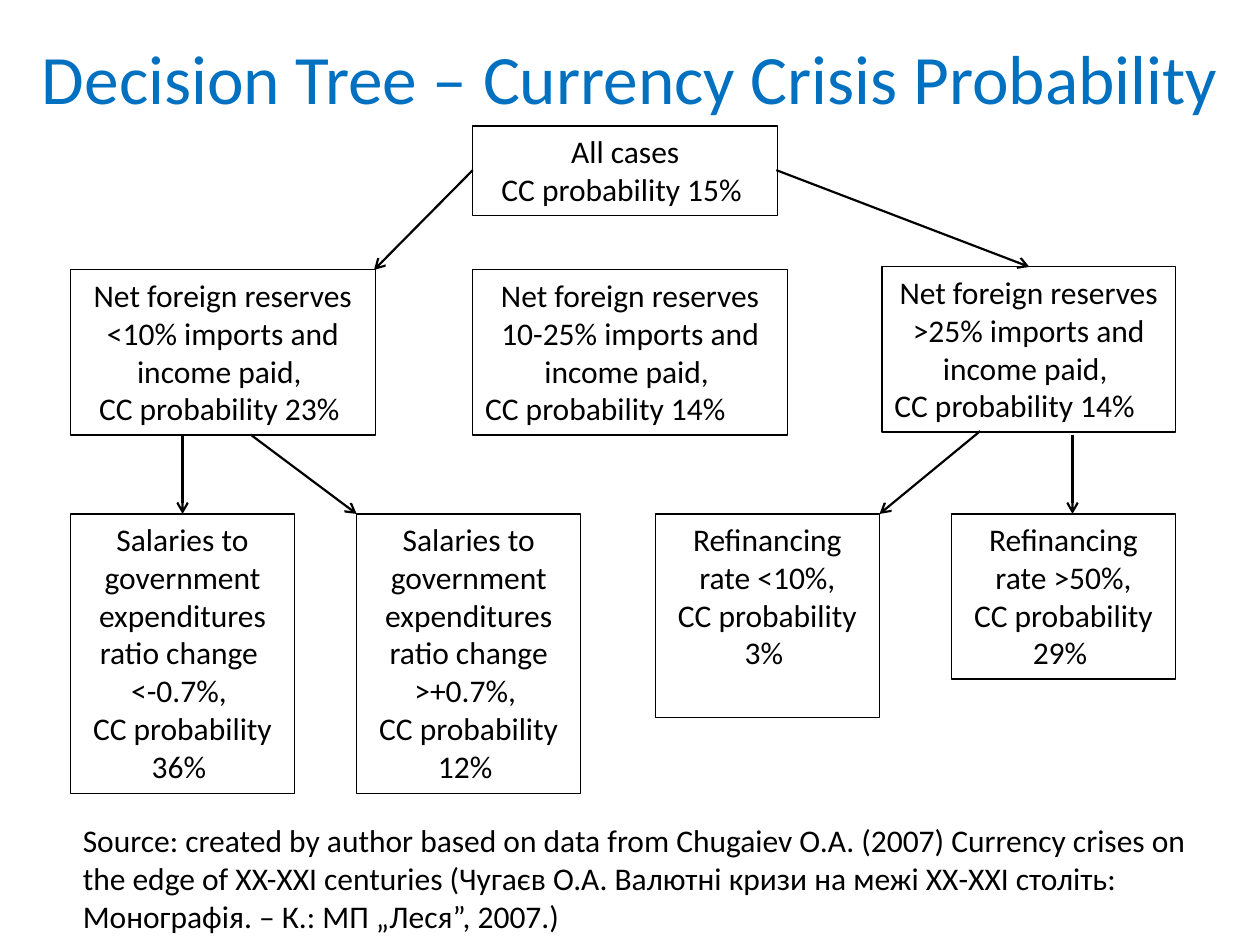
"""Build a slide with a decision tree of currency crisis probability."""
from dataclasses import dataclass

from lxml.etree import SubElement
from pptx import Presentation
from pptx.dml.color import RGBColor
from pptx.enum.shapes import MSO_CONNECTOR as Link, MSO_SHAPE as Kind
from pptx.enum.text import MSO_ANCHOR as Anchor, PP_ALIGN as Align
from pptx.oxml.ns import qn
from pptx.util import Cm, Pt


@dataclass(frozen=True)
class Theme:
    font: str = "Calibri"
    ink: RGBColor = RGBColor(0, 0, 0)
    blue: RGBColor = RGBColor(0x00, 0x70, 0xC0)
    head: float = 39.6
    body: float = 18
    edge: float = 0.75
    wire: float = 1.25


THEME = Theme()
MID, LEFT = Align.CENTER, Align.LEFT
ROW = 10.36
SLIM = 4.52
FOOT = 8.76

TITLE = "Decision Tree – Currency Crisis Probability"
SOURCE = (
    "Source: created by author based on data from Chugaiev O.A. (2007) "
    "Currency crises on the edge of XX-XXI centuries (Чугаєв О.А. Валютні "
    "кризи на межі ХХ-ХХІ століть: Монографія. – К.: МП „Леся”, 2007.)"
)
RATIO = "Salaries to government expenditures ratio change "

NODES = [
    ((9.53, 2.54, 6.15, 1.8), ["All cases", "CC probability 15% "], MID),
    ((1.42, 5.44, 6.15, 3.33),
     ["Net foreign reserves <10% imports and income paid, ",
      "CC probability 23% "], MID),
    ((9.53, 5.44, 6.35, 3.33),
     ["Net foreign reserves 10-25% imports and income paid, ",
      "CC probability 14%"], LEFT),
    ((17.78, 5.38, 5.92, 3.33),
     ["Net foreign reserves >25% imports and income paid, ",
      "CC probability 14%"], LEFT),
    ((1.42, ROW, SLIM, 5.64),
     [RATIO, "<-0.7%, ", "CC probability 36% "], MID),
    ((7.19, ROW, SLIM, 5.64),
     [RATIO + ">+0.7%, ", "CC probability 12% "], MID),
    ((13.21, ROW, SLIM, 4.11),
     ["Refinancing rate <10%,", "CC probability 3% "], MID),
    ((19.18, ROW, SLIM, 3.33),
     ["Refinancing rate >50%,", "CC probability 29% "], MID),
]

ARROWS = [
    (9.53, 3.43, 7.54, 5.44),
    (15.65, 3.43, 20.75, 5.38),
    (3.68, FOOT, 3.68, ROW),
    (5.05, FOOT, 7.19, ROW),
    (19.76, 8.69, 17.73, ROW),
    (21.62, FOOT, 21.62, ROW),
]


def write(shape, lines, size, color, align, last=None, anchor=Anchor.TOP):
    frame = shape.text_frame
    frame.word_wrap = True
    frame.vertical_anchor = anchor
    frame.text = "\n".join(lines)
    for para in frame.paragraphs:
        para.alignment = align
        para.font.name = THEME.font
        para.font.size = Pt(size)
        para.font.color.rgb = color
    if last is not None:
        frame.paragraphs[-1].alignment = last


def add_text(slide, area, text, size, color, align, anchor=Anchor.TOP):
    box = slide.shapes.add_textbox(*map(Cm, area))
    write(box, [text], size, color, align, anchor=anchor)


def add_node(slide, area, lines, last):
    node = slide.shapes.add_shape(Kind.RECTANGLE, *map(Cm, area))
    node.shadow.inherit = False
    node.fill.background()
    node.line.color.rgb = THEME.ink
    node.line.width = Pt(THEME.edge)
    write(node, lines, THEME.body, THEME.ink, MID, last)


def add_arrow(slide, ends):
    wire = slide.shapes.add_connector(Link.STRAIGHT, *map(Cm, ends))
    wire.line.color.rgb = THEME.ink
    wire.line.width = Pt(THEME.wire)
    SubElement(wire.line._get_or_add_ln(), qn("a:tailEnd"), type="arrow")
    SubElement(wire._element.spPr, qn("a:effectLst"))


def main():
    deck = Presentation()
    deck.slide_width, deck.slide_height = Cm(25.4), Cm(19.05)
    slide = deck.slides.add_slide(deck.slide_layouts[6])
    add_text(slide, (0, 0.76, 25.4, 1.57), TITLE, THEME.head, THEME.blue,
             MID, Anchor.MIDDLE)
    for area, lines, last in NODES:
        add_node(slide, area, lines, last)
    add_text(slide, (1.42, 16.43, 22.78, 2.57), SOURCE, THEME.body,
             THEME.ink, LEFT)
    for ends in ARROWS:
        add_arrow(slide, ends)
    deck.save("out.pptx")


if __name__ == "__main__":
    main()
